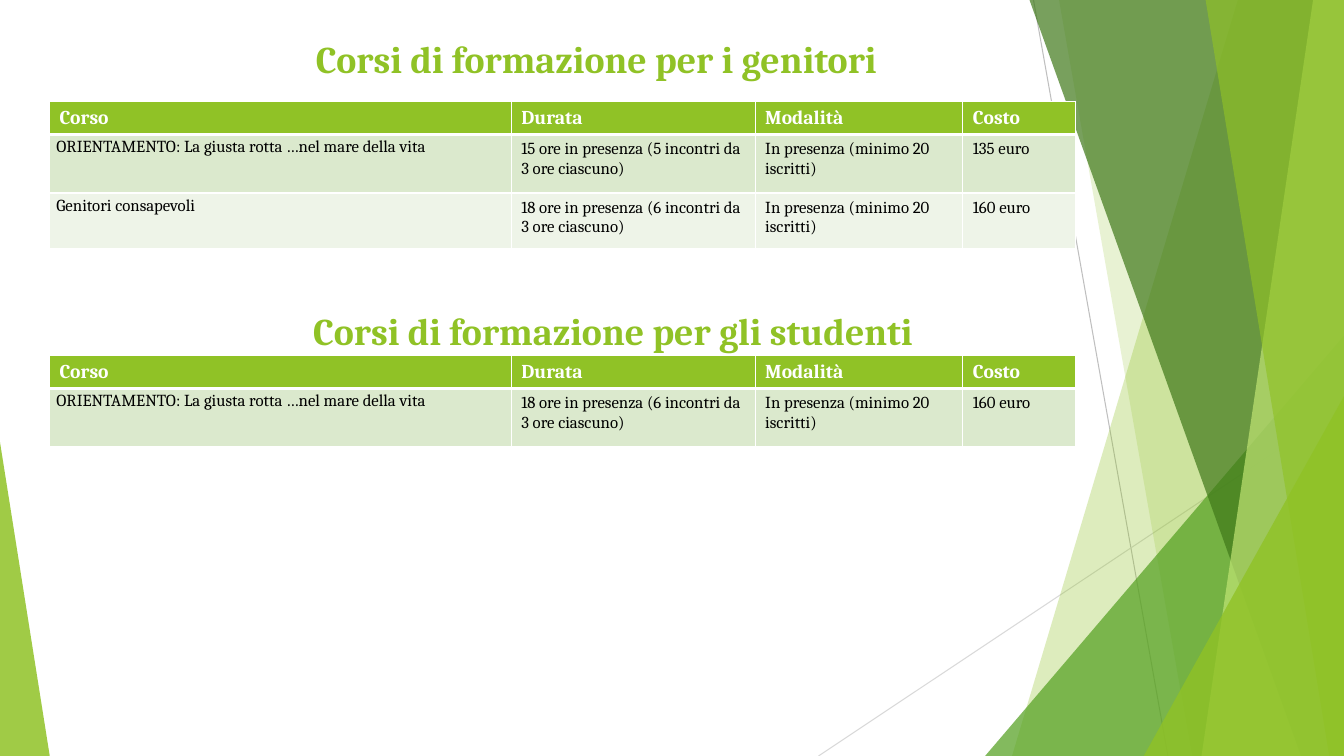
from dataclasses import dataclass

from lxml import etree
from pptx import Presentation
from pptx import util as u
from pptx.dml.color import RGBColor
from pptx.enum import shapes, text
from pptx.oxml.ns import qn

WIDTH, HEIGHT = u.Inches(13.33), u.Inches(7.5)


@dataclass(frozen=True)
class Theme:
    font: str = "Cambria"
    lime: str = "90C226"
    green: str = "54A021"
    forest: str = "3F7819"
    pale: str = "C0E474"
    white: str = "FFFFFF"
    black: str = "000000"
    bands: tuple = ("DBE9CD", "EEF4E8")
    rules: tuple = ("BFBFBF", "D9D9D9")
    heading: int = 27
    header: int = 14
    body: int = 12


THEME = Theme()
COLUMNS = (4.58, 2.42, 2.06, 1.12)
HEADER = ("Corso", "Durata", "Modalità", "Costo")
HEADER_HEIGHT = 0.33
TABLE_LEFT = 0.49
ORIENTATION = "ORIENTAMENTO: La giusta rotta …nel mare della vita"
SIX_MEETINGS = "18 ore in presenza (6 incontri da 3 ore ciascuno)"
IN_PERSON = "In presenza (minimo 20 iscritti)"
PARENT_COURSES = (
    (ORIENTATION, "15 ore in presenza (5 incontri da 3 ore ciascuno)", IN_PERSON, "135 euro"),
    ("Genitori consapevoli", SIX_MEETINGS, IN_PERSON, "160 euro"),
)
STUDENT_COURSES = ((ORIENTATION, SIX_MEETINGS, IN_PERSON, "160 euro"),)


def across(share):
    return round(WIDTH * share)


def down(share):
    return round(HEIGHT * share)


def write(frame, words, *, size, color, bold=False, align=None, spacing=None, after=None):
    """Put one formatted paragraph into a text frame."""
    frame.word_wrap = True
    paragraph = frame.paragraphs[0]
    paragraph.alignment = align
    if spacing:
        paragraph.line_spacing = spacing
    if after:
        paragraph.space_after = u.Pt(after)
    run = paragraph.add_run()
    run.text = words
    run.font.name, run.font.size, run.font.bold = THEME.font, u.Pt(size), bold
    run.font.color.rgb = RGBColor.from_string(color)


def tint(facet, color, opacity):
    """Fill a facet with a translucent colour, without outline or shadow."""
    facet.shadow.inherit = False
    facet.line.fill.background()
    facet.fill.solid()
    facet.fill.fore_color.rgb = RGBColor.from_string(color)
    swatch = facet.fill._xPr.find(qn("a:solidFill"))[0]
    etree.SubElement(swatch, qn("a:alpha")).set("val", str(opacity * 1000))


def hairline(slide, start, end, color):
    line = slide.shapes.add_connector(
        shapes.MSO_CONNECTOR.STRAIGHT,
        across(start[0]), down(start[1]), across(end[0]), down(end[1]))
    line.line.width = u.Pt(0.75)
    line.line.color.rgb = RGBColor.from_string(color)
    etree.SubElement(line.element.spPr, qn("a:effectLst"))


def facet(slide, top_share, bottom_share, color, opacity):
    """Fill from a slanted left edge to the right side of the slide."""
    outline = slide.shapes.build_freeform(across(top_share), 0)
    outline.add_line_segments(
        [(WIDTH, 0), (WIDTH, HEIGHT), (across(bottom_share), HEIGHT)], close=True)
    tint(outline.convert_to_shape(), color, opacity)


def corner(slide, left, width, top, apex, color, opacity):
    """Right-angled triangle standing on the bottom edge."""
    wedge = slide.shapes.add_shape(
        shapes.MSO_SHAPE.ISOSCELES_TRIANGLE,
        across(left), down(top), across(width), HEIGHT - down(top))
    wedge.adjustments[0] = apex
    tint(wedge, color, opacity)


def backdrop(slide):
    hairline(slide, (0.769, 0), (0.869, 1), THEME.rules[0])
    hairline(slide, (1, 0.537), (0.609, 1), THEME.rules[1])
    facet(slide, 0.921, 0.753, THEME.lime, 30)
    facet(slide, 0.788, 0.887, THEME.lime, 20)
    corner(slide, 0.733, 0.267, 0.444, 1, THEME.green, 72)
    facet(slide, 0.766, 0.968, THEME.forest, 70)
    facet(slide, 0.977, 0.894, THEME.pale, 70)
    facet(slide, 0.897, 0.989, THEME.lime, 65)
    corner(slide, 0.851, 0.149, 0.524, 1, THEME.lime, 80)
    corner(slide, 0, 0.037, 0.585, 0, THEME.lime, 85)


def heading(box, words, left, top):
    box.left, box.top = across(left), down(top)
    box.width, box.height = across(0.687), down(0.088)
    frame = box.text_frame
    frame.auto_size = text.MSO_AUTO_SIZE.NONE
    frame.vertical_anchor = text.MSO_ANCHOR.TOP
    write(frame, words, size=THEME.heading, color=THEME.lime, bold=True,
          align=text.PP_ALIGN.CENTER)


def paint_cell(cell, color, top, bottom):
    """White borders first, then the fill, as the cell's XML requires."""
    properties = cell._tc.get_or_add_tcPr()
    for side, points in (("L", 1), ("R", 1), ("T", top), ("B", bottom)):
        border = etree.SubElement(properties, qn(f"a:ln{side}"), w=str(u.Pt(points)))
        paint = etree.SubElement(border, qn("a:solidFill"))
        etree.SubElement(paint, qn("a:srgbClr"), val=THEME.white)
    cell.fill.solid()
    cell.fill.fore_color.rgb = RGBColor.from_string(color)


def course_table(slide, top, courses, row_heights):
    heights = (HEADER_HEIGHT, *row_heights)
    table = slide.shapes.add_table(
        len(heights), len(COLUMNS), u.Inches(TABLE_LEFT), down(top),
        u.Inches(sum(COLUMNS)), u.Inches(sum(heights))).table
    for column, width in zip(table.columns, COLUMNS):
        column.width = u.Inches(width)
    for r, (height, entries) in enumerate(zip(heights, (HEADER, *courses))):
        table.rows[r].height = u.Inches(height)
        for c, words in enumerate(entries):
            cell = table.cell(r, c)
            if r == 0:
                paint_cell(cell, THEME.lime, 1, 3)
                write(cell.text_frame, words, size=THEME.header,
                      color=THEME.white, bold=True)
                continue
            paint_cell(cell, THEME.bands[(r - 1) % 2], 3 if r == 1 else 1, 1)
            course_name = c == 0
            if course_name:
                cell.margin_left = cell.margin_right = u.Inches(0.07)
                cell.margin_top = cell.margin_bottom = 0
            write(cell.text_frame, words, size=THEME.body, color=THEME.black,
                  spacing=1.15 if course_name else None,
                  after=10 if course_name else None)


def main():
    deck = Presentation()
    deck.slide_width, deck.slide_height = WIDTH, HEIGHT
    slide = deck.slides.add_slide(deck.slide_layouts[5])

    # Green facets, with the title brought in front of them
    backdrop(slide)
    title = slide.shapes.title
    title.element.getparent().append(title.element)

    # Courses for parents
    heading(title, "Corsi di formazione per i genitori", 0.1, 0.041)
    course_table(slide, 0.134, PARENT_COURSES, (0.58, 0.55))

    # Courses for students
    students = slide.shapes.add_textbox(0, 0, 0, 0)
    heading(students, "Corsi di formazione per gli studenti", 0.1125, 0.401)
    course_table(slide, 0.47, STUDENT_COURSES, (0.58,))

    deck.save("out.pptx")


if __name__ == "__main__":
    main()
